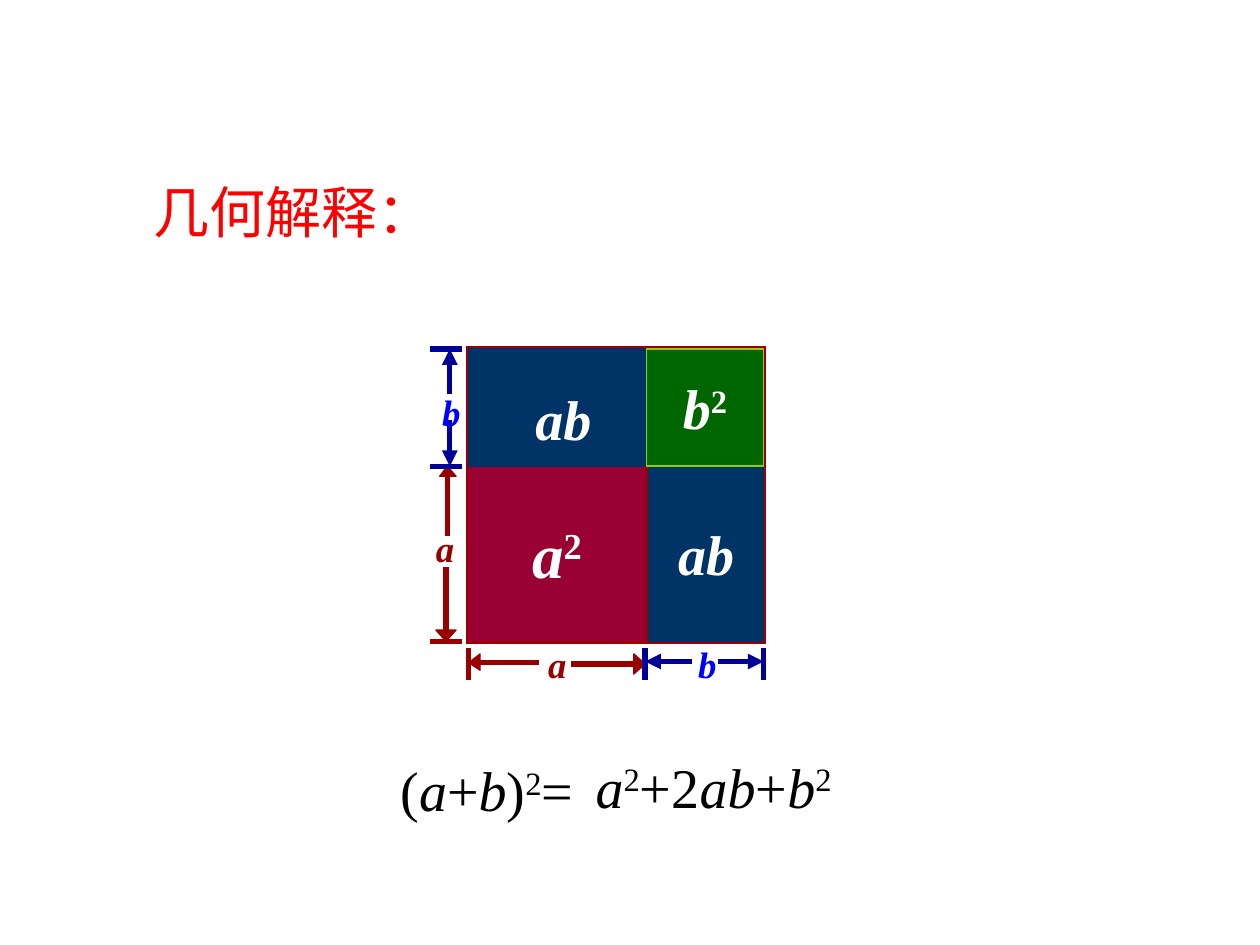
"""Slide that explains the square of a sum with a divided square."""
from lxml import etree
from pptx import Presentation
from pptx import util as u
from pptx.dml.color import RGBColor
from pptx.enum import shapes, text
from pptx.oxml.ns import qn

RED = RGBColor(0xFF, 0x00, 0x00)
MAROON = RGBColor(0x99, 0x00, 0x00)
CRIMSON = RGBColor(0x99, 0x00, 0x33)
NAVY = RGBColor(0x00, 0x00, 0x99)
BLUE = RGBColor(0x00, 0x00, 0xFF)
TEAL = RGBColor(0x00, 0x33, 0x66)
GREEN = RGBColor(0x00, 0x66, 0x00)
LIME = RGBColor(0x99, 0xCC, 0x00)
WHITE = RGBColor(0xFF, 0xFF, 0xFF)
BLACK = RGBColor(0x00, 0x00, 0x00)

LEFT, MIDDLE, RIGHT = 3.72, 5.12, 6.06
TOP, SPLIT, BOTTOM = 2.77, 3.7, 5.09


def write_formula(frame, terms, size, color, bold):
    """Write letters in italics and a lone 2 as an exponent."""
    for term in terms:
        run = frame.paragraphs[0].add_run()
        run.text = term
        run.font.name = "Times New Roman"
        run.font.size = u.Pt(size)
        run.font.bold = bold
        run.font.italic = term.isalpha()
        run.font.color.rgb = color
        if term == "2":
            run._r.get_or_add_rPr().set("baseline", "30000")


def draw_line(x1, y1, x2, y2, color, arrow=False):
    """Draw a straight measure line, with an arrowhead at its end if asked."""
    line = slide.shapes.add_connector(
        shapes.MSO_CONNECTOR.STRAIGHT, *map(u.Inches, (x1, y1, x2, y2)))
    line.line.color.rgb = color
    line.line.width = u.Pt(3)
    if arrow:
        etree.SubElement(line.line._get_or_add_ln(), qn("a:tailEnd"), type="triangle")
    etree.SubElement(line._element.spPr, qn("a:effectLst"))


prs = Presentation()
prs.slide_width, prs.slide_height = u.Inches(10), u.Inches(7.5)
slide = prs.slides.add_slide(prs.slide_layouts[5])

heading = slide.shapes.title
heading.left, heading.top = u.Inches(1.12), u.Inches(1.36)
heading.width, heading.height = u.Inches(2.99), u.Inches(0.64)
heading.text_frame.vertical_anchor = text.MSO_ANCHOR.TOP
heading_line = heading.text_frame.paragraphs[0]
heading_line.alignment = text.PP_ALIGN.LEFT
heading_run = heading_line.add_run()
heading_run.text = "几何解释："
heading_run.font.name = "Arial"
heading_run.font.size = u.Pt(32)
heading_run.font.color.rgb = RED

for x1, x2 in ((LEFT, MIDDLE), (MIDDLE, RIGHT)):
    for y1, y2 in ((TOP, SPLIT), (SPLIT, BOTTOM)):
        outline = slide.shapes.add_shape(
            shapes.MSO_SHAPE.RECTANGLE, *map(u.Inches, (x1, y1, x2 - x1, y2 - y1)))
        outline.shadow.inherit = False
        outline.fill.background()
        outline.line.color.rgb = MAROON
        outline.line.width = u.Pt(3)
        etree.SubElement(outline.line._get_or_add_ln(), qn("a:miter"), lim="800000")

for measure in ((4.28, 5.26, 3.79, 5.26), (4.53, 5.27, 5.05, 5.27),
                (3.55, 4.25, 3.55, 3.76), (3.54, 4.5, 3.54, 5.02)):
    draw_line(*measure, MAROON)

for start, *corners in (((381, 532), (372, 526), (381, 519)),
                        ((503, 519), (512, 527), (503, 535)),
                        ((349, 378), (355, 370), (362, 378)),
                        ((362, 500), (354, 509), (346, 500))):
    builder = slide.shapes.build_freeform(*start, scale=u.Inches(0.01))
    builder.add_line_segments(corners, close=True)
    arrowhead = builder.convert_to_shape()
    arrowhead.shadow.inherit = False
    arrowhead.fill.solid()
    arrowhead.fill.fore_color.rgb = MAROON
    arrowhead.line.color.rgb = MAROON
    arrowhead.line.width = u.Pt(0.75)

for x, color in ((LEFT, MAROON), (MIDDLE, NAVY), (RIGHT, NAVY)):
    draw_line(x, 5.14, x, 5.4, color)
for y, color in ((BOTTOM, MAROON), (SPLIT, NAVY), (TOP, NAVY)):
    draw_line(3.67, y, 3.41, y, color)
for measure in ((5.7, 5.25, RIGHT, 5.25), (5.49, 5.25, MIDDLE, 5.25),
                (3.57, 3.33, 3.57, SPLIT), (3.57, 3.13, 3.57, TOP)):
    draw_line(*measure, NAVY, arrow=True)

for side, x, y, width, color in (("a", 4.35, 5.09, 0.21, MAROON), ("a", 3.46, 4.17, 0.21, MAROON),
                                 ("b", 5.54, 5.09, 0.31, BLUE), ("b", 3.51, 3.09, 0.21, BLUE)):
    label = slide.shapes.add_textbox(*map(u.Inches, (x, y, width, 0.35))).text_frame
    label.margin_left = label.margin_right = label.margin_top = label.margin_bottom = 0
    label.word_wrap = True
    write_formula(label, [side], 21, color, True)

for terms, size, x, y, width, height, fill, border in (
        (["a", "2"], 36, LEFT, 3.69, 1.4, 1.4, CRIMSON, None),
        (["ab"], 32, 5.15, 3.69, 0.91, 1.4, TEAL, TEAL),
        ([], 32, LEFT, TOP, 1.4, 0.93, TEAL, TEAL),
        (["b", "2"], 32, 5.13, TOP, 0.93, 0.93, GREEN, LIME)):
    area = slide.shapes.add_shape(
        shapes.MSO_SHAPE.RECTANGLE, *map(u.Inches, (x, y, width, height)))
    area.shadow.inherit = False
    area.fill.solid()
    area.fill.fore_color.rgb = fill
    if border:
        area.line.color.rgb = border
        area.line.width = u.Pt(0.75)
    else:
        area.line.fill.background()
    area.text_frame.word_wrap = False
    area.text_frame.vertical_anchor = text.MSO_ANCHOR.MIDDLE
    area.text_frame.paragraphs[0].alignment = text.PP_ALIGN.CENTER
    write_formula(area.text_frame, terms, size, WHITE, True)

for terms, x, y, width, color, bold in (
        (["ab"], 4.15, 3.0, 0.65, WHITE, True),
        (["(", "a", "+", "b", ")", "2", "="], 3.08, 5.95, 1.67, BLACK, False),
        (["a", "2", "+2", "ab", "+", "b", "2"], 4.63, 5.92, 2.13, BLACK, False)):
    formula = slide.shapes.add_textbox(*map(u.Inches, (x, y, width, 0.64))).text_frame
    formula.word_wrap = terms[0] == "("
    write_formula(formula, terms, 32, color, bold)

prs.save("out.pptx")
